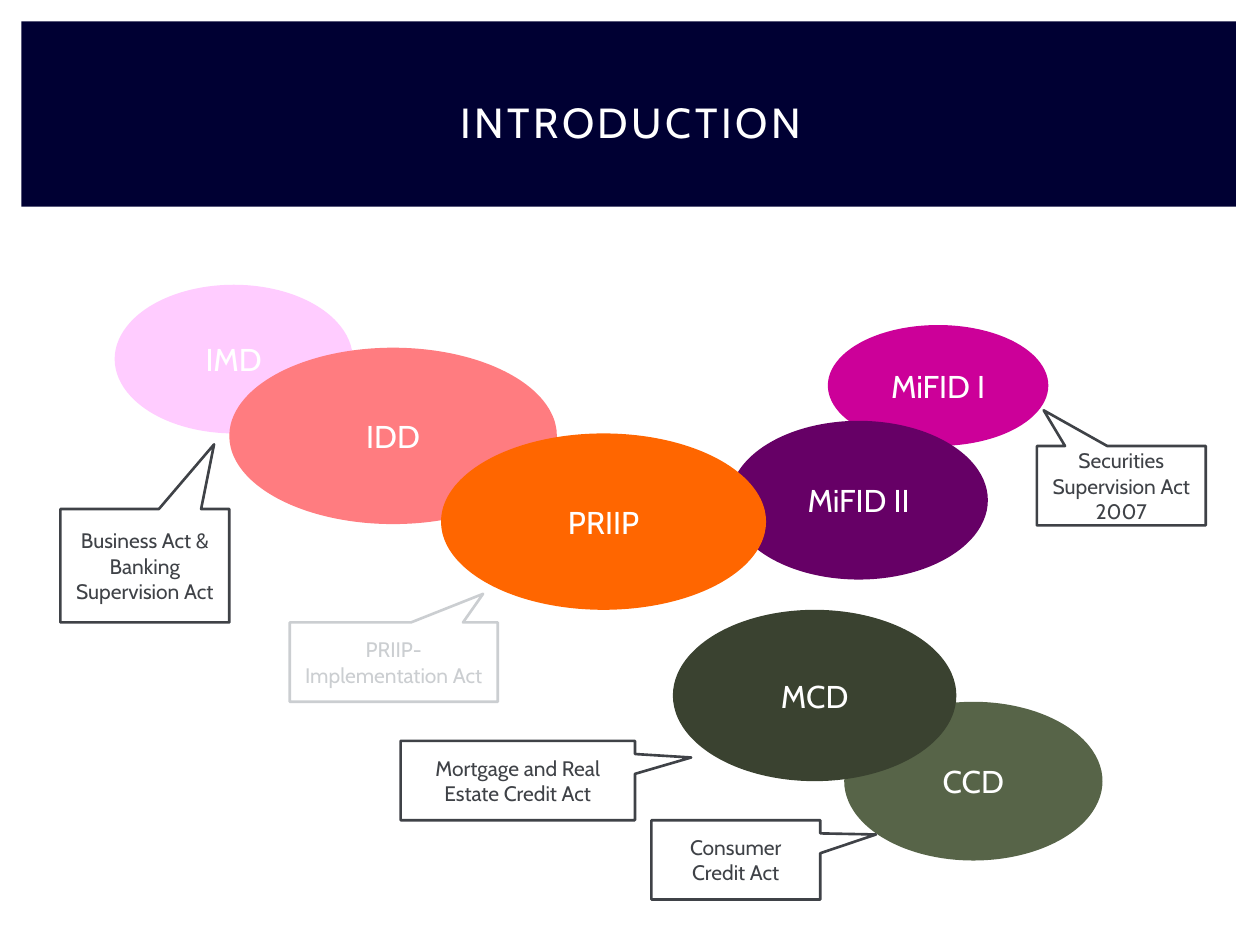
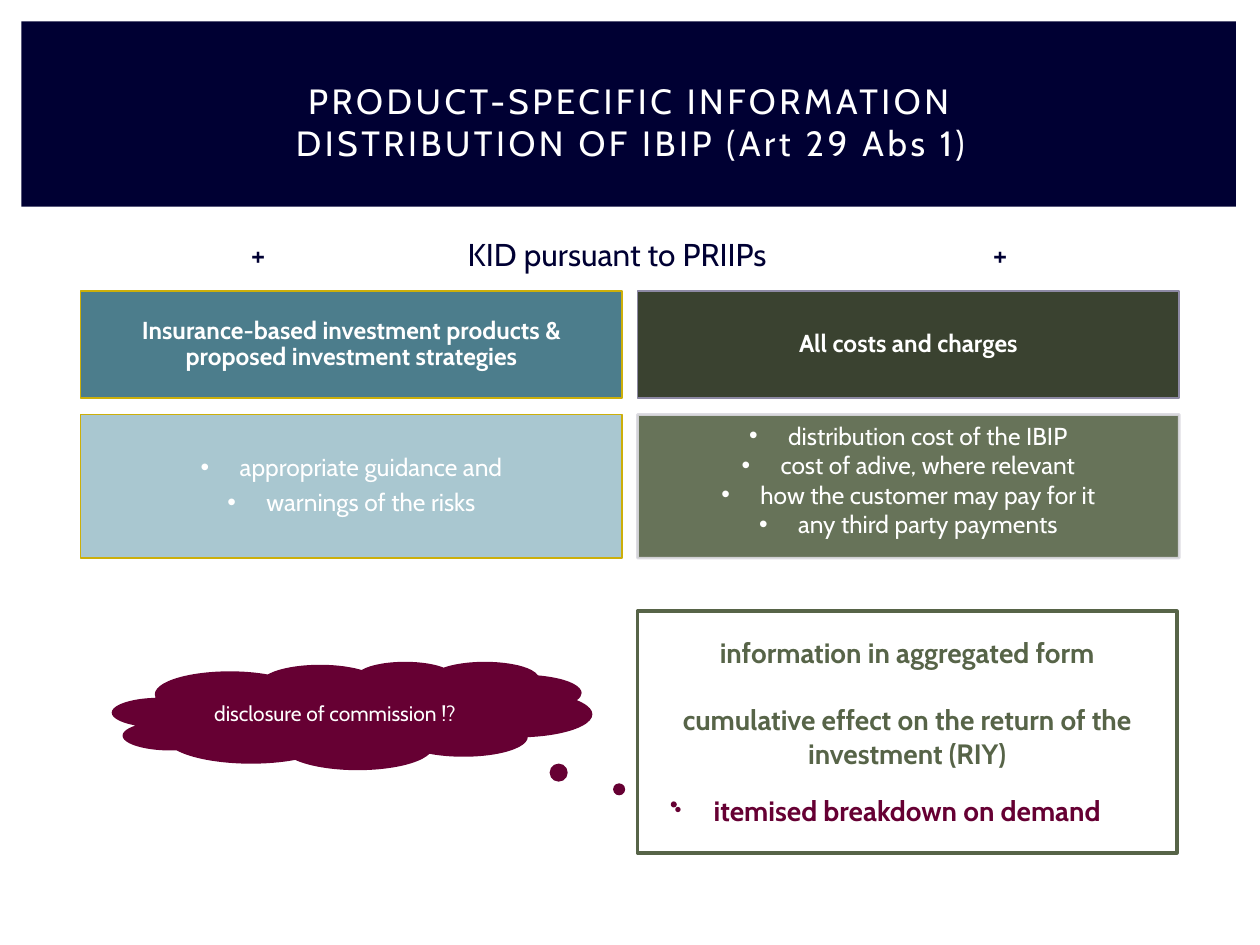
from lxml import etree
from pptx import Presentation
from pptx.dml.color import RGBColor
from pptx.enum import shapes, text
from pptx.oxml import ns
from pptx.util import Inches, Pt

FONT = "Cabin"
WHITE = RGBColor(0xFF, 0xFF, 0xFF)
NAVY = RGBColor(0x00, 0x00, 0x33)
PINK = RGBColor(0xFF, 0xCC, 0xFF)
SALMON = RGBColor(0xFF, 0x7C, 0x80)
MAGENTA = RGBColor(0xCC, 0x00, 0x99)
PURPLE = RGBColor(0x66, 0x00, 0x66)
ORANGE = RGBColor(0xFF, 0x66, 0x00)
MOSS = RGBColor(0x57, 0x64, 0x48)
FOREST = RGBColor(0x3A, 0x42, 0x30)
CHARCOAL = RGBColor(0x3F, 0x42, 0x47)
SILVER = RGBColor(0xCB, 0xCE, 0xD1)
WINE = RGBColor(0x66, 0x00, 0x33)
TEAL = RGBColor(0x4C, 0x7D, 0x8C)
ICE = RGBColor(0xA9, 0xC7, 0xD0)
GOLD = RGBColor(0xCC, 0xAF, 0x0A)
LILAC = RGBColor(0x8D, 0x89, 0xA4)
MIST = RGBColor(0xDB, 0xDA, 0xE0)

SHAPE = shapes.MSO_SHAPE
MIDDLE = text.MSO_ANCHOR.MIDDLE
TOP = text.MSO_ANCHOR.TOP
HANGING = Inches(0.31)

DIRECTIVES = [
    ("IMD", (0.91, 2.26, 1.89, 1.18), PINK),
    ("IDD", (1.82, 2.76, 2.6, 1.4), SALMON),
    ("MiFID I", (6.57, 2.58, 1.75, 0.96), MAGENTA),
    ("MiFID II", (5.79, 3.34, 2.05, 1.26), PURPLE),
    ("PRIIP", (3.5, 3.44, 2.58, 1.4), ORANGE),
    ("CCD", (6.7, 5.57, 2.05, 1.26), MOSS),
    ("MCD", (5.34, 4.84, 2.25, 1.36), FOREST),
]
NATIONAL_ACTS = [
    (["Business Act &", "Banking Supervision Act"],
     (0.48, 4.04, 1.34, 0.9), (0.41, -1.07), CHARCOAL),
    (["Consumer Credit Act"], (5.17, 6.51, 1.34, 0.63), (0.83, -0.32), CHARCOAL),
    (["Mortgage and Real Estate Credit Act"],
     (3.18, 5.88, 1.86, 0.63), (0.74, -0.29), CHARCOAL),
    (["Securities Supervision Act 2007"],
     (8.23, 3.54, 1.34, 0.63), (-0.46, -0.95), CHARCOAL),
    (["PRIIP-Implementation Act"],
     (2.3, 4.94, 1.65, 0.63), (0.43, -0.86), SILVER),
]


def add_figure(page, kind, box, fill=None, line=None, width=1.5):
    """Add a flat preset shape with optional fill and outline."""
    figure = page.shapes.add_shape(kind, *map(Inches, box))
    figure.shadow.inherit = False
    if fill is None:
        figure.fill.background()
    else:
        figure.fill.solid()
        figure.fill.fore_color.rgb = fill
    if line is None:
        figure.line.fill.background()
    else:
        figure.line.color.rgb = line
        figure.line.width = Pt(width)
    return figure


def add_span(para, words, size, color, bold=False):
    """Add one styled run."""
    span = para.add_run()
    span.text = words
    span.font.name = FONT
    span.font.size = Pt(size)
    span.font.bold = bold
    span.font.color.rgb = color
    return span


def write(figure, lines, size, color, bold=False, anchor=MIDDLE):
    """Write centred paragraphs into a shape and return them."""
    frame = figure.text_frame
    frame.word_wrap = True
    frame.vertical_anchor = anchor
    paras = []
    for index, words in enumerate(lines):
        para = frame.add_paragraph() if index else frame.paragraphs[0]
        para.alignment = text.PP_ALIGN.CENTER
        add_span(para, words, size, color, bold)
        paras.append(para)
    return paras


def add_bullet(para, percent=100, right=0):
    """Give a paragraph a hanging round bullet."""
    props = para._p.get_or_add_pPr()
    props.set("marL", str(HANGING))
    props.set("marR", str(right))
    props.set("indent", str(-HANGING))
    for tag, key, value in (("a:buSzPct", "val", str(percent * 1000)),
                            ("a:buFont", "typeface", "Arial"),
                            ("a:buChar", "char", "•")):
        etree.SubElement(props, ns.qn(tag)).set(key, value)


def set_opacity(figure, percent):
    """Make the fill and outline colours of a shape translucent."""
    for color in figure._element.spPr.iter(ns.qn("a:srgbClr")):
        etree.SubElement(color, ns.qn("a:alpha")).set("val", str(percent * 1000))


def add_title(page, lines, size):
    """Draw the title band with its letterspaced heading."""
    add_figure(page, SHAPE.RECTANGLE, (0.17, 0.17, 9.64, 1.47), NAVY)
    heading = page.shapes.add_textbox(*map(Inches, (0.42, 0.39, 9.17, 1.15)))
    heading.text_frame.word_wrap = True
    heading.text_frame.vertical_anchor = MIDDLE
    para = heading.text_frame.paragraphs[0]
    para.alignment = text.PP_ALIGN.CENTER
    for index, words in enumerate(lines):
        if index:
            para.add_line_break()
        span = add_span(para, words, size, WHITE)
        span.font._element.set("spc", "200")


def add_callout(page, lines, box, tip, color):
    """Draw an outlined speech box pointing at a directive."""
    callout = add_figure(page, SHAPE.RECTANGULAR_CALLOUT, box, line=color)
    callout.adjustments[0], callout.adjustments[1] = tip
    write(callout, lines, 12, color)


def add_subtitle(page, box):
    """Write the key document line between two plus signs on centred tabs."""
    label = page.shapes.add_textbox(*map(Inches, box))
    label.text_frame.word_wrap = True
    para = label.text_frame.paragraphs[0]
    stops = etree.SubElement(para._p.get_or_add_pPr(), ns.qn("a:tabLst"))
    for position in (1.72, 4.57, 7.61):
        stop = etree.SubElement(stops, ns.qn("a:tab"))
        stop.set("pos", str(Inches(position)))
        stop.set("algn", "ctr")
    add_span(para, "\t+\tKID pursuant to PRIIPs\t+", 18, NAVY)


def add_panel(page, box, lines, fill, line, bold=False, anchor=MIDDLE, spaced=True):
    """Draw a filled panel; unbolded lines become bullets."""
    panel = add_figure(page, SHAPE.RECTANGLE, box, fill, line, 1)
    for para in write(panel, lines, 14, WHITE, bold, anchor):
        if spaced:
            para.line_spacing = 0.9
            para.space_after = Pt(4.9)
        if not bold:
            add_bullet(para)
    return panel


def add_summary(page, box):
    """Draw the outlined box on aggregated cost information."""
    summary = add_figure(page, SHAPE.RECTANGLE, box, line=MOSS, width=2)
    summary.text_frame.margin_top = Inches(0.19)
    lines = ["information in aggregated form",
             "cumulative effect on the return of the investment (RIY)",
             "itemised breakdown on demand"]
    _, effect, demand = write(summary, lines, 16, MOSS, True, TOP)
    effect.space_before = Pt(19.4)
    demand.space_before = Pt(13.4)
    demand.runs[0].font.color.rgb = WINE
    add_bullet(demand, 70, HANGING)


def add_thought(page, box):
    """Draw the thought cloud about commission."""
    cloud = add_figure(page, SHAPE.CLOUD_CALLOUT, box, WINE)
    cloud.adjustments[0], cloud.adjustments[1] = 0.67, 0.82
    write(cloud, ["disclosure of commission !?"], 12, WHITE)


def build_introduction(page):
    """Build the map of directives and national acts."""
    add_title(page, ["INTRODUCTION"], 24)
    for name, box, color in DIRECTIVES:
        write(add_figure(page, SHAPE.OVAL, box, color), [name], 18, WHITE)
    for act in NATIONAL_ACTS:
        add_callout(page, *act)


def build_product_information(page):
    """Build the two-column overview of product information."""
    add_title(page, ["PRODUCT-SPECIFIC INFORMATION",
                     "DISTRIBUTION OF IBIP (Art 29 Abs 1)"], 20)
    left, right, width = 0.64, 5.06, 4.3
    head, body = (2.31, 0.85), (3.29, 1.14)
    add_summary(page, (right, 4.85, 4.28, 1.92))
    add_subtitle(page, (0.23, 1.82, 9.53, 0.4))
    add_thought(page, (0.89, 5.25, 3.81, 0.86))
    add_panel(page, (left, head[0], width, head[1]),
              ["Insurance-based investment products & proposed investment strategies"],
              TEAL, GOLD, bold=True)
    add_panel(page, (right, head[0], width, head[1]),
              ["All costs and charges"], FOREST, LILAC, bold=True)
    costs = add_panel(page, (right, body[0], width, body[1]),
                      ["distribution cost of the IBIP", "cost of adive, where relevant",
                       "how the customer may pay for it", "any third party payments"],
                      MOSS, MIST, anchor=TOP, spaced=False)
    costs.line.width = Pt(1.5)
    set_opacity(costs, 90)
    add_panel(page, (left, body[0], width, body[1]),
              ["appropriate guidance and", "warnings of the risks"], ICE, GOLD)


def main():
    """Create the deck and save it."""
    deck = Presentation()
    deck.slide_width, deck.slide_height = Inches(10), Inches(7.5)
    for build in (build_introduction, build_product_information):
        build(deck.slides.add_slide(deck.slide_layouts[6]))
    deck.save("out.pptx")


if __name__ == "__main__":
    main()
